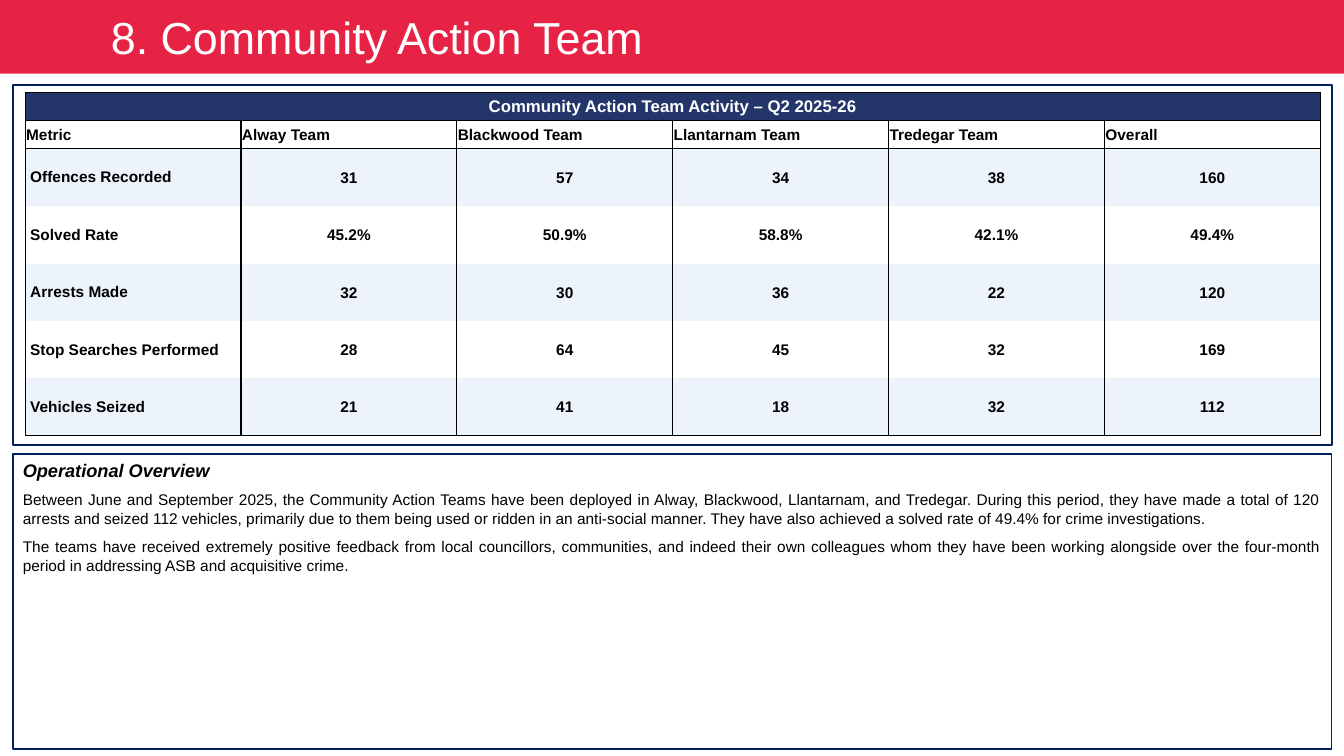
from dataclasses import dataclass

from lxml import etree
from pptx import Presentation
from pptx.dml.color import RGBColor
from pptx.enum.shapes import MSO_SHAPE
from pptx.enum.text import MSO_ANCHOR, MSO_AUTO_SIZE, PP_ALIGN
from pptx.oxml.ns import qn
from pptx.util import Pt

RECTANGLE = MSO_SHAPE.RECTANGLE
TOP, MIDDLE = MSO_ANCHOR.TOP, MSO_ANCHOR.MIDDLE
LEFT, CENTER, JUSTIFY = PP_ALIGN.LEFT, PP_ALIGN.CENTER, PP_ALIGN.JUSTIFY
NO_AUTOFIT = MSO_AUTO_SIZE.NONE


@dataclass(frozen=True)
class Theme:
    font: str = "Arial"
    banner: RGBColor = RGBColor(0xE6, 0x23, 0x44)
    outline: RGBColor = RGBColor(0x00, 0x20, 0x60)
    heading_fill: RGBColor = RGBColor(0x24, 0x35, 0x69)
    band: RGBColor = RGBColor(0xEC, 0xF3, 0xFA)
    white: RGBColor = RGBColor(0xFF, 0xFF, 0xFF)
    black: RGBColor = RGBColor(0x00, 0x00, 0x00)
    title_size: float = 32
    overview_size: float = 13
    table_title_size: float = 12
    body_size: float = 11


THEME = Theme()

TITLE = "8. Community Action Team"
TABLE_TITLE = "Community Action Team Activity – Q2 2025-26"
HEADERS = ["Metric", "Alway Team", "Blackwood Team", "Llantarnam Team",
           "Tredegar Team", "Overall"]
METRICS = [
    ["Offences Recorded", "31", "57", "34", "38", "160"],
    ["Solved Rate", "45.2%", "50.9%", "58.8%", "42.1%", "49.4%"],
    ["Arrests Made", "32", "30", "36", "22", "120"],
    ["Stop Searches Performed", "28", "64", "45", "32", "169"],
    ["Vehicles Seized", "21", "41", "18", "32", "112"],
]
OVERVIEW_HEADING = "Operational Overview"
OVERVIEW = [
    "Between June and September 2025, the Community Action Teams have been "
    "deployed in Alway, Blackwood, Llantarnam, and Tredegar. During this period, "
    "they have made a total of 120 arrests and seized 112 vehicles, primarily due "
    "to them being used or ridden in an anti-social manner. They have also "
    "achieved a solved rate of 49.4% for crime investigations.",
    "The teams have received extremely positive feedback from local councillors, "
    "communities, and indeed their own colleagues whom they have been working "
    "alongside over the four-month period in addressing ASB and acquisitive crime.",
]


def format_paragraph(paragraph, size, color, align, bold=False, italic=False):
    paragraph.alignment = align
    for run in paragraph.runs:
        font = run.font
        font.name, font.size = THEME.font, Pt(size)
        font.bold, font.italic = bold, italic
        font.color.rgb = color


def set_margins(target, left, top, right, bottom):
    target.margin_left, target.margin_top = Pt(left), Pt(top)
    target.margin_right, target.margin_bottom = Pt(right), Pt(bottom)


def set_borders(cell, top, bottom):
    properties = cell._tc.get_or_add_tcPr()
    sides = {"a:lnL": True, "a:lnR": True, "a:lnT": top, "a:lnB": bottom}
    for index, (side, visible) in enumerate(sides.items()):
        line = etree.Element(qn(side), w=str(Pt(1)))
        if visible:
            fill = etree.SubElement(line, qn("a:solidFill"))
            etree.SubElement(fill, qn("a:srgbClr"), val=str(THEME.black))
        else:
            etree.SubElement(line, qn("a:noFill"))
        properties.insert(index, line)


def add_title(slide, left, top, width, height):
    title = slide.shapes.title
    title.left, title.top = Pt(left), Pt(top)
    title.width, title.height = Pt(width), Pt(height)
    title.fill.solid()
    title.fill.fore_color.rgb = THEME.banner
    frame = title.text_frame
    frame.text = TITLE
    frame.auto_size = NO_AUTOFIT
    frame.vertical_anchor = MIDDLE
    set_margins(frame, 79.2, 3.6, 7.2, 3.6)
    format_paragraph(frame.paragraphs[0], THEME.title_size, THEME.white, LEFT)


def add_panel(slide, left, top, width, height):
    panel = slide.shapes.add_shape(
        RECTANGLE, Pt(left), Pt(top), Pt(width), Pt(height))
    panel.shadow.inherit = False
    panel.fill.background()
    panel.line.color.rgb = THEME.outline
    panel.line.width = Pt(1.25)
    return panel


def fill_cell(cell, text, row, column):
    is_title, is_metric = row == 0, row > 1
    cell.text = text
    cell.vertical_anchor = MIDDLE
    if is_metric and column == 0:
        set_margins(cell, 3.6, 3.6, 3.6, 3.6)
    else:
        set_margins(cell, 0.7, 0.7, 0.7, 0)
    centred = is_title or (is_metric and column > 0)
    format_paragraph(
        cell.text_frame.paragraphs[0],
        THEME.table_title_size if is_title else THEME.body_size,
        THEME.white if is_title else THEME.black,
        CENTER if centred else LEFT, bold=True)
    cell.fill.solid()
    if is_title:
        cell.fill.fore_color.rgb = THEME.heading_fill
    else:
        cell.fill.fore_color.rgb = (
            THEME.band if is_metric and row % 2 == 0 else THEME.white)
    set_borders(cell, top=row <= 2, bottom=row < 2 or row == len(METRICS) + 1)


def add_activity(slide, left, top, width, height):
    add_panel(slide, left, top, width, height)
    rows = [[TABLE_TITLE] + [""] * (len(HEADERS) - 1), HEADERS, *METRICS]
    table_width, table_height = width - 17.3, height - 11.6
    table = slide.shapes.add_table(
        len(rows), len(HEADERS), Pt(left + 8.8), Pt(top + 5),
        Pt(table_width), Pt(table_height)).table
    table.first_row = table.horz_banding = False
    for column in table.columns:
        column.width = Pt(table_width / len(HEADERS))
    heading_height = 20.2
    metric_height = (table_height - 2 * heading_height) / len(METRICS)
    for index, values in enumerate(rows):
        table.rows[index].height = Pt(heading_height if index < 2 else metric_height)
        for column, value in enumerate(values):
            fill_cell(table.cell(index, column), value, index, column)
    table.cell(0, 0).merge(table.cell(0, len(HEADERS) - 1))


def add_overview(slide, left, top, width, height):
    frame = add_panel(slide, left, top, width, height).text_frame
    frame.word_wrap = True
    frame.vertical_anchor = TOP
    set_margins(frame, 7.2, 3.6, 7.2, 3.6)
    frame.text = "\n".join([OVERVIEW_HEADING, *OVERVIEW])
    heading, *body = frame.paragraphs
    format_paragraph(heading, THEME.overview_size, THEME.black, JUSTIFY,
                     bold=True, italic=True)
    for paragraph in body:
        paragraph.space_before = Pt(7)
        format_paragraph(paragraph, THEME.body_size, THEME.black, JUSTIFY)


def main():
    deck = Presentation()
    deck.slide_width, deck.slide_height = Pt(960), Pt(540)
    slide = deck.slides.add_slide(deck.slide_layouts[5])
    add_title(slide, 0, 0, 960, 52.6)
    add_activity(slide, 9.2, 61, 942.5, 257)
    add_overview(slide, 9.2, 324.2, 942, 211)
    deck.save("out.pptx")


if __name__ == "__main__":
    main()
